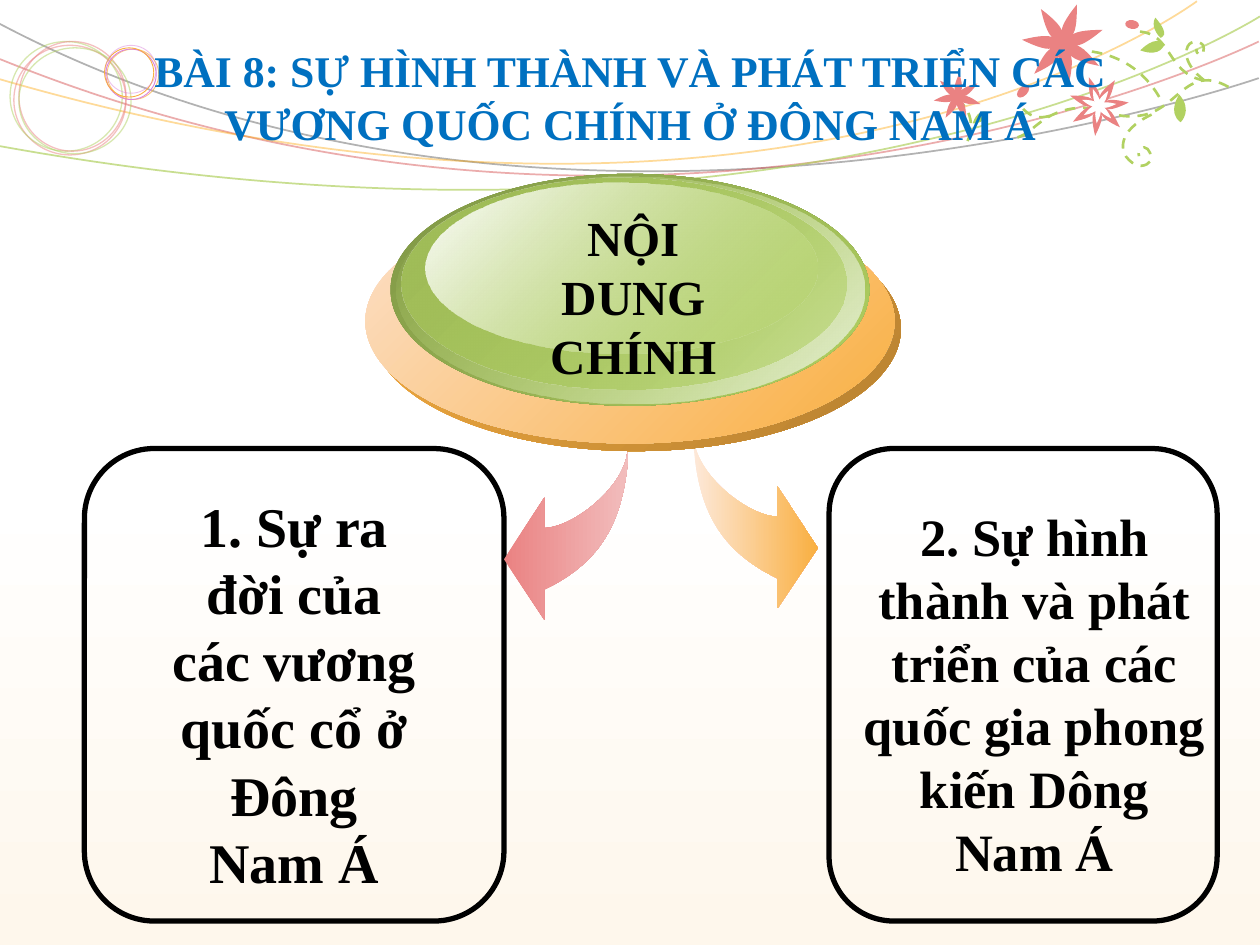
from math import cos, radians, sin

from lxml import etree
from pptx import Presentation
from pptx.dml.color import RGBColor
from pptx.enum.dml import MSO_LINE
from pptx.enum.shapes import MSO_SHAPE
from pptx.enum.text import MSO_ANCHOR, PP_ALIGN
from pptx.oxml.ns import qn
from pptx.util import Inches, Pt

OVAL, ROUNDED, RECTANGLE = MSO_SHAPE.OVAL, MSO_SHAPE.ROUNDED_RECTANGLE, MSO_SHAPE.RECTANGLE
CENTER, MIDDLE, DASH = PP_ALIGN.CENTER, MSO_ANCHOR.MIDDLE, MSO_LINE.DASH

WHITE, BLACK = RGBColor(255, 255, 255), RGBColor(0, 0, 0)
BLUE, GRAY = RGBColor(0x00, 0x70, 0xC0), RGBColor(0xB2, 0xB2, 0xB2)
GREEN, OLIVE = RGBColor(0xB1, 0xD1, 0x61), RGBColor(0x7F, 0x96, 0x45)
MOSS, MINT = RGBColor(0xA0, 0xBD, 0x58), RGBColor(0xE8, 0xF0, 0xD9)
PINK, PALE_PINK = RGBColor(0xEA, 0x82, 0x82), RGBColor(0xF2, 0xBD, 0xBD)
RED, VIOLET = RGBColor(0xD8, 0x5A, 0x5A), RGBColor(0xDB, 0x85, 0xDB)
ORANGE, BROWN = RGBColor(0xF9, 0xAF, 0x41), RGBColor(0xB6, 0x80, 0x30)
AMBER, PEACH = RGBColor(0xFE, 0xA3, 0x00), RGBColor(0xFC, 0xE0, 0xC9)
CREAM, IVORY = RGBColor(0xFD, 0xE9, 0xDA), RGBColor(0xFE, 0xF7, 0xEC)
FONT = "Times New Roman"

# Content: text, box, size
TITLE = "BÀI 8: SỰ HÌNH THÀNH VÀ PHÁT TRIỂN CÁC VƯƠNG QUỐC CHÍNH Ở ĐÔNG NAM Á"
TEXTS = [
    ("NỘI DUNG CHÍNH", (3.99, 1.6, 2.08, 1.51), 28),
    ("1. Sự ra đời của các vương quốc cổ ở Đông Nam Á", (1.22, 3.85, 2.23, 3.33), 32),
    ("2. Sự hình thành và phát triển của các quốc gia phong kiến Dông Nam Á",
     (6.75, 3.95, 2.92, 3.13), 30),
]
CARDS = [(6.58, 3.56, 3.08, 3.75), (0.67, 3.56, 3.33, 3.75)]

# Curves: a start point, then two control points and an end point per piece
SWEEPS = [
    ([(0, 0.19), (4.46, 2.54), (9.99, 0.62), (9.99, 0.62)], GRAY, 100),
    ([(0, 0.47), (5.33, 2.63), (9.99, 0.33), (9.99, 0.33)], RED, 50),
    ([(0, 0.63), (6.25, 2.44), (9.5, 0.01), (9.5, 0.01)], AMBER, 40),
    ([(0, 1.16), (6.53, 2.34), (10, 0.13), (10, 0.13)], GREEN, 70),
]
STEMS = [
    [(7.68, 1.12), (7.77, 0.9), (7.6, 0.79), (7.6, 0.79)],
    [(9.75, 0.69), (9.43, 0.51), (9.36, 0.84), (9.09, 0.91), (8.82, 0.97), (8.73, 0.81),
     (8.47, 0.87), (8.22, 0.93), (8.19, 1.09), (8.02, 1.1)],
    [(9.56, 0.64), (9.39, 0.51), (9.4, 0.39), (9.44, 0.35), (9.49, 0.31), (9.53, 0.34),
     (9.55, 0.36), (9.56, 0.39), (9.55, 0.44), (9.52, 0.44), (9.5, 0.43), (9.49, 0.4), (9.5, 0.39)],
    [(9.56, 0.64), (9.25, 0.58), (9.31, 0.26), (9.03, 0.25)],
    [(8.33, 0.92), (8.16, 0.97), (8.09, 0.82), (8.09, 0.82)],
    [(9.2, 0.77), (8.93, 0.31), (8.42, 0.41), (8.42, 0.41)],
    [(9.14, 0.91), (8.86, 1.04), (8.89, 1.21), (8.96, 1.27), (9.03, 1.34), (9.1, 1.32),
     (9.13, 1.28), (9.15, 1.25), (9.12, 1.17), (9.08, 1.17), (9.04, 1.18), (9.03, 1.21), (9.04, 1.24)],
]
LEAVES = [
    [(7.72, 0.98), (7.83, 0.98), (7.84, 0.89), (7.84, 0.89), (7.75, 0.86), (7.72, 0.98), (7.72, 0.98)],
    [(9.21, 0.3), (9.12, 0.21), (9.17, 0.14), (9.17, 0.14), (9.3, 0.29), (9.21, 0.3), (9.21, 0.3)],
    [(9.24, 0.35), (9.17, 0.27), (9.05, 0.4), (9.05, 0.4), (9.22, 0.46), (9.24, 0.35), (9.24, 0.35)],
    [(9.36, 0.75), (9.47, 0.88), (9.37, 0.97), (9.37, 0.97), (9.26, 0.89), (9.36, 0.75), (9.36, 0.75)],
]
# Flowers: centre, radius, angle of one petal, colour
FLOWERS = [
    ((7.6, 0.77), 0.19, 120, PINK),
    ((8.44, 0.35), 0.33, 83, PINK),
    ((8.72, 0.84), 0.24, 251, PINK),
    ((8.72, 0.84), 0.14, 251, WHITE),
]
BUDS = [((8.06, 0.69, 0.12, 0.07), 133.8), ((8.93, 0.16, 0.11, 0.07), 8.7)]
# Rings: box, colour, width, opacity
RINGS = [
    ((0.11, 0.36, 0.89, 0.87), PINK, 0.75, 50),
    ((0.08, 0.33, 0.89, 0.87), GREEN, 0.75, 50),
    ((0.15, 0.33, 0.85, 0.87), PINK, 0.75, 50),
    ((0.15, 0.38, 0.89, 0.84), GREEN, 0.75, 50),
    ((0.85, 0.39, 0.41, 0.4), ORANGE, 0.5, 70),
    ((0.84, 0.39, 0.4, 0.4), VIOLET, 0.5, 100),
    ((0.83, 0.38, 0.39, 0.39), ORANGE, 0.5, 100),
    ((0.84, 0.36, 0.4, 0.38), VIOLET, 0.5, 50),
]
# Button layers: box, then colour and opacity of both gradient ends
BUTTON = [
    ((2.95, 1.64, 4.2, 1.94), (ORANGE, 100), (BROWN, 100)),
    ((2.9, 1.58, 4.2, 1.94), (PEACH, 100), (ORANGE, 100)),
    ((3.1, 1.38, 3.8, 1.84), (OLIVE, 100), (GREEN, 100)),
    ((3.15, 1.4, 3.71, 1.8), (GREEN, 0), (MINT, 100)),
    ((3.19, 1.41, 3.53, 1.68), (MOSS, 100), (GREEN, 48)),
    ((3.38, 1.45, 3.11, 1.36), (WHITE, 100), (GREEN, 38)),
]
ARROW_OUTER = [(4.99, 3.56), (4.96, 4.1), (4.8, 4.45), (4.32, 4.68)]
ARROW_HEAD = [(4.32, 4.92), (4, 4.44), (4.32, 3.95), (4.32, 4.19)]
ARROW_INNER = [(4.55, 4.19), (4.98, 3.85), (4.98, 3.56)]


def arrow_curve():
    curve = list(ARROW_OUTER)
    for corner in ARROW_HEAD:
        curve += [curve[-1], corner, corner]
    return curve + ARROW_INNER


def flower_curve(center, radius, angle, petals=7):
    def polar(share, degrees):
        return (center[0] + share * radius * cos(radians(degrees)),
                center[1] + share * radius * sin(radians(degrees)))

    half = 180 / petals
    curve = [polar(0.27, angle - half)]
    for petal in range(petals):
        axis = angle + petal * 2 * half
        curve += [polar(0.45, axis - 30), polar(1, axis), polar(0.45, axis + 30), polar(0.27, axis + half)]
    return curve


def set_opacity(element, percent):
    if percent < 100:
        for color in element.iter(qn("a:srgbClr")):
            etree.SubElement(color, qn("a:alpha")).set("val", str(percent * 1000))


def paint(shape, fill=None, line=None, width=1, opacity=100, dash=None):
    shape.shadow.inherit = False
    if fill is None:
        shape.fill.background()
    else:
        shape.fill.solid()
        shape.fill.fore_color.rgb = fill
    if line is None:
        shape.line.fill.background()
    else:
        shape.line.color.rgb = line
        shape.line.width = Pt(width)
        shape.line.dash_style = dash
        set_opacity(shape.line.fill._xPr, opacity)


def paint_gradient(shape, ends, clockwise):
    paint(shape)
    shape.fill.gradient()
    shape.fill.gradient_angle = (360 - clockwise) % 360
    for stop, position, (color, opacity) in zip(shape.fill.gradient_stops, (0, 1), ends):
        stop.position = position
        stop.color.rgb = color
        set_opacity(stop._gs, opacity)


def add_preset(slide, kind, box):
    return slide.shapes.add_shape(kind, *map(Inches, box))


def add_curve(slide, curve, close=False, tag="a:cubicBezTo", group=3):
    points = [(Inches(x), Inches(y)) for x, y in curve]
    builder = slide.shapes.build_freeform(*points[0], scale=1.0)
    builder.add_line_segments(points[1:], close=close)
    shape = builder.convert_to_shape()
    # Join each group of straight steps into one Bézier piece
    steps = list(shape._element.iter(qn("a:lnTo")))
    for first in range(0, len(points) - 1, group):
        head, *rest = steps[first:first + group]
        head.tag = qn(tag)
        for step in rest:
            head.append(step[0])
            step.getparent().remove(step)
    return shape


def write(frame, text, size, color):
    frame.word_wrap = True
    paragraph = frame.paragraphs[0]
    paragraph.alignment = CENTER
    run = paragraph.add_run()
    run.text = text
    for name, value in {"name": FONT, "size": Pt(size), "bold": True}.items():
        setattr(run.font, name, value)
    run.font.color.rgb = color


def main():
    presentation = Presentation()
    presentation.slide_width, presentation.slide_height = Inches(10), Inches(7.5)
    slide = presentation.slides.add_slide(presentation.slide_layouts[5])

    # Background and decoration
    paint_gradient(add_preset(slide, RECTANGLE, (0, 3.83, 10, 3.67)), [(WHITE, 100), (IVORY, 100)], 90)
    for curve, color, opacity in SWEEPS:
        paint(add_curve(slide, curve), line=color, opacity=opacity)
    for box, color, width, opacity in RINGS:
        paint(add_preset(slide, OVAL, box), line=color, width=width, opacity=opacity)
    for curve in STEMS:
        paint(add_curve(slide, curve), line=GREEN, width=1.5, dash=DASH)
    for curve in LEAVES:
        paint(add_curve(slide, curve, close=True), fill=GREEN)
    for box, rotation in BUDS:
        bud = add_preset(slide, OVAL, box)
        bud.rotation = rotation
        paint(bud, fill=PINK)
    for center, radius, angle, color in FLOWERS:
        curve = flower_curve(center, radius, angle)
        paint(add_curve(slide, curve, True, "a:quadBezTo", 2), fill=color)

    # Cards, mirrored arrows and button
    for box in CARDS:
        paint(add_preset(slide, ROUNDED, box), line=BLACK, width=3)
    left = arrow_curve()
    right = [(10.49 - x, y - 0.09) for x, y in left]
    for curve, start, end in ((left, PINK, PALE_PINK), (right, CREAM, ORANGE)):
        paint_gradient(add_curve(slide, curve, close=True), [(start, 100), (end, 100)], 0)
    for box, *ends in BUTTON:
        paint_gradient(add_preset(slide, OVAL, box), ends, 45)

    # Title in front of the decoration, then the texts
    title = slide.shapes.title
    title.left, title.top, title.width, title.height = map(Inches, (0.5, 0.14, 9, 1.25))
    title.text_frame.vertical_anchor = MIDDLE
    write(title.text_frame, TITLE, 25, BLUE)
    slide.shapes._spTree.append(title._element)
    for text, box, size in TEXTS:
        write(slide.shapes.add_textbox(*map(Inches, box)).text_frame, text, size, BLACK)

    presentation.save("out.pptx")


if __name__ == "__main__":
    main()
